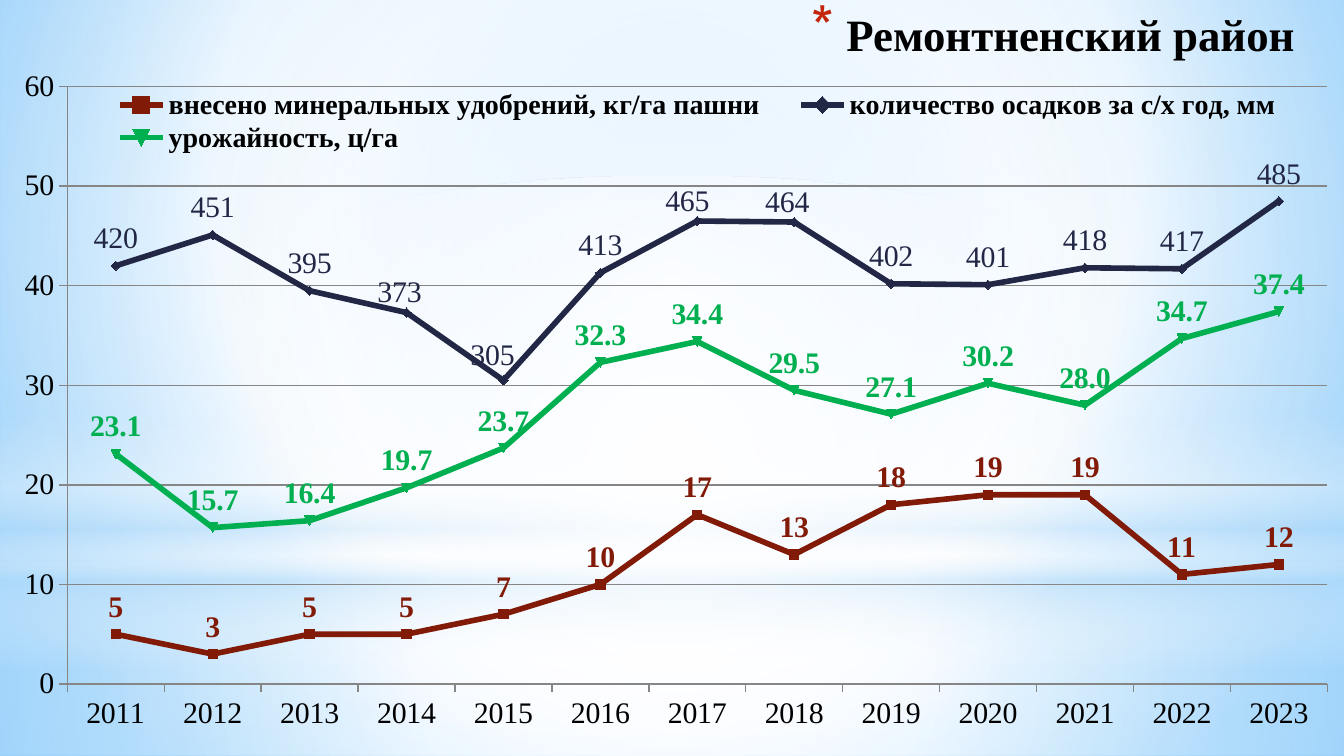
from lxml import etree
from pptx import Presentation, util as u
from pptx.chart.data import CategoryChartData
from pptx.dml.color import RGBColor
from pptx.enum import chart as kinds, shapes, text
from pptx.oxml import parse_xml
from pptx.oxml.ns import nsdecls, qn

SCALE = 914400 / 134.4
FONT = "Times New Roman"
GREY = "868686"
CHART_BOX = (9, 67, 1325, 679)
CENTRE = (50, 50, 50, 50)
YEARS = [str(year) for year in range(2011, 2024)]
RAIN = [420, 451, 395, 373, 305, 413, 465, 464, 402, 401, 418, 417, 485]
RAIN_LABEL_SHIFTS = {3: (-7, 7), 4: (-11, 2), 6: (-10, 7), 7: (-7, 7)}
# name, values, colour, label format
SERIES = [
    ("внесено минеральных удобрений, кг/га пашни",
     [5, 3, 5, 5, 7, 10, 17, 13, 18, 19, 19, 11, 12], "821A08", "#,##0"),
    ("количество осадков за с/х год, мм",
     [amount / 10 for amount in RAIN], "212745", "General"),
    ("урожайность, ц/га",
     [23.1, 15.7, 16.4, 19.7, 23.7, 32.3, 34.4, 29.5, 27.1, 30.2, 28, 34.7, 37.4],
     "00B050", "0.0"),
]
# box, preset, gradient stops (position, colour, opacity), centre or None for linear
GLOWS = [
    ((0, 563, 1344, 193), "RECTANGLE",
     [(0, "FFFFFF", 91), (37, "FFFFFF", 76), (100, "B4DCFA", 79)], CENTRE),
    ((0, 0, 1344, 563), "RECTANGLE",
     [(0, "FFFFFF", 89), (48, "FFFFFF", 62), (100, "B4DCFA", 79)], CENTRE),
    ((0, 415, 1344, 253), "RECTANGLE",
     [(0, "FFFFFF", 0), (29, "FFFFFF", 30), (45, "B4DCFA", 40),
      (55, "FFFFFF", 26), (65, "B4DCFA", 60), (100, "FFFFFF", 0)], None),
    ((0, 176, 1344, 563), "OVAL",
     [(0, "FFFFFF", 100), (56, "FFFFFF", 0)], CENTRE),
]


def px(*lengths):
    return [u.Emu(round(length * SCALE)) for length in lengths]


def rgb(colour):
    return RGBColor.from_string(colour)


def style_font(font, size=None, colour="000000", bold=False):
    font.name = FONT
    font.bold = bold
    font.color.rgb = rgb(colour)
    if size:
        font.size = u.Pt(size)


def paint_gradient(owner, fill, stops, centre):
    """Swap the fill for a gradient, round a centre or running downwards."""
    fill.solid()
    marks = "".join(
        f'<a:gs pos="{place * 1000}"><a:srgbClr val="{colour}">'
        f'<a:alpha val="{opacity * 1000}"/></a:srgbClr></a:gs>'
        for place, colour, opacity in stops)
    if centre:
        sides = " ".join(f'{side}="{part * 1000}"' for side, part in zip("ltrb", centre))
        course = f'<a:path path="circle"><a:fillToRect {sides}/></a:path>'
    else:
        course = '<a:lin ang="5400000" scaled="0"/>'
    solid = owner.element.xpath(".//a:solidFill")[0]
    solid.getparent().replace(solid, parse_xml(
        f'<a:gradFill {nsdecls("a")} rotWithShape="1"><a:gsLst>{marks}</a:gsLst>'
        f'{course}</a:gradFill>'))


def add_glow(slide, box, preset, stops, centre):
    glow = slide.shapes.add_shape(getattr(shapes.MSO_SHAPE, preset), *px(*box))
    glow.shadow.inherit = False
    glow.line.fill.background()
    paint_gradient(glow, glow.fill, stops, centre)


def add_title(slide, words, box, size, bullet_colour):
    frame = slide.shapes.add_textbox(*px(*box)).text_frame
    frame.word_wrap = True
    frame.vertical_anchor = text.MSO_ANCHOR.MIDDLE
    frame.margin_left = frame.margin_right = u.Inches(0.07)
    frame.margin_top = frame.margin_bottom = u.Inches(0.04)
    para = frame.paragraphs[0]
    para.alignment = text.PP_ALIGN.RIGHT
    props = para._p.get_or_add_pPr()
    props.set("marL", str(u.Inches(0.26)))
    props.set("indent", str(-u.Inches(0.26)))
    for bullet in (f'<a:buClr {nsdecls("a")}><a:srgbClr val="{bullet_colour}"/></a:buClr>',
                   f'<a:buSzPct {nsdecls("a")} val="128000"/>',
                   f'<a:buChar {nsdecls("a")} char="*"/>'):
        props.append(parse_xml(bullet))
    span = para.add_run()
    span.text = words
    style_font(span.font, size, bold=True)


def set_layout(parent, after, **settings):
    """Give a chart part a manual layout, placed after the named child."""
    for old in parent.findall(qn("c:layout")):
        parent.remove(old)
    layout = etree.Element(qn("c:layout"))
    manual = etree.SubElement(layout, qn("c:manualLayout"))
    for name, value in settings.items():
        etree.SubElement(manual, qn("c:" + name)).set("val", str(value))
    if after:
        parent.find(qn("c:" + after)).addnext(layout)
    else:
        parent.insert(0, layout)


def style_series(series, colour, label_format):
    series.smooth = False
    series.format.line.width = u.Pt(3)
    series.format.line.color.rgb = rgb(colour)
    marker = series.marker
    marker.style = kinds.XL_MARKER_STYLE.AUTOMATIC
    marker.size = 5
    marker.format.fill.solid()
    marker.format.fill.fore_color.rgb = rgb(colour)
    marker.format.line.color.rgb = rgb(colour)
    labels = series.data_labels
    labels.show_value = True
    labels.position = kinds.XL_LABEL_POSITION.ABOVE
    labels.number_format = label_format
    labels.number_format_is_linked = False
    style_font(labels.font, 16, colour, bold=True)


def label_rain(series, colour):
    """Show the rainfall in mm, though the line is drawn at a tenth of it."""
    for index, amount in enumerate(RAIN):
        label = series.points[index].data_label
        span = label.text_frame.paragraphs[0].add_run()
        span.text = str(amount)
        style_font(span.font, 16, colour)
        label.position = kinds.XL_LABEL_POSITION.ABOVE
        if index in RAIN_LABEL_SHIFTS:
            across, down = RAIN_LABEL_SHIFTS[index]
            node = series._element.xpath(f'./c:dLbls/c:dLbl[c:idx/@val="{index}"]')[0]
            set_layout(node, "idx", x=round(across / CHART_BOX[2], 4),
                       y=round(down / CHART_BOX[3], 4))


def style_axes(chart):
    values = chart.value_axis
    values.minimum_scale, values.maximum_scale, values.major_unit = 0, 60, 10
    values.tick_labels.number_format = "0"
    values.tick_labels.number_format_is_linked = False
    values.has_major_gridlines = True
    values.major_gridlines.format.line.color.rgb = rgb(GREY)
    for axis in (values, chart.category_axis):
        axis.major_tick_mark = kinds.XL_TICK_MARK.OUTSIDE
        axis.format.line.color.rgb = rgb(GREY)
        style_font(axis.tick_labels.font, 16)


def add_line_chart(slide):
    data = CategoryChartData()
    data.categories = YEARS
    for name, values, *_ in SERIES:
        data.add_series(name, values)
    chart = slide.shapes.add_chart(
        kinds.XL_CHART_TYPE.LINE_MARKERS, *px(*CHART_BOX), data).chart
    style_font(chart.font, 16)
    chart.has_title = False
    chart.plots[0].vary_by_categories = False
    style_axes(chart)
    for series, (_, _, colour, label_format) in zip(chart.plots[0].series, SERIES):
        style_series(series, colour, label_format)
    label_rain(chart.plots[0].series[1], SERIES[1][2])
    chart.has_legend = True
    chart.legend.position = kinds.XL_LEGEND_POSITION.BOTTOM
    chart.legend.include_in_layout = False
    style_font(chart.legend.font, 15, bold=True)
    set_layout(chart.legend._element, "legendPos", xMode="edge", yMode="edge",
               x=0.06, y=0.03, w=0.92, h=0.1)
    set_layout(chart._chartSpace.chart.plotArea, None, layoutTarget="inner",
               xMode="edge", yMode="edge", x=0.044, y=0.029, w=0.951, h=0.88)


def main():
    deck = Presentation()
    deck.slide_width, deck.slide_height = px(1344, 756)
    page = deck.slides.add_slide(deck.slide_layouts[6])
    paint_gradient(page, page.background.fill,
                   [(0, "9ED5FF", 100), (60, "FFFFFF", 100), (100, "5BB9FF", 100)],
                   (20, 10, 20, 60))
    for glow in GLOWS:
        add_glow(page, *glow)
    add_title(page, "Ремонтненский район", (78, 0, 1226, 68), 24, "C3260C")
    add_line_chart(page)
    deck.save("out.pptx")


if __name__ == "__main__":
    main()
